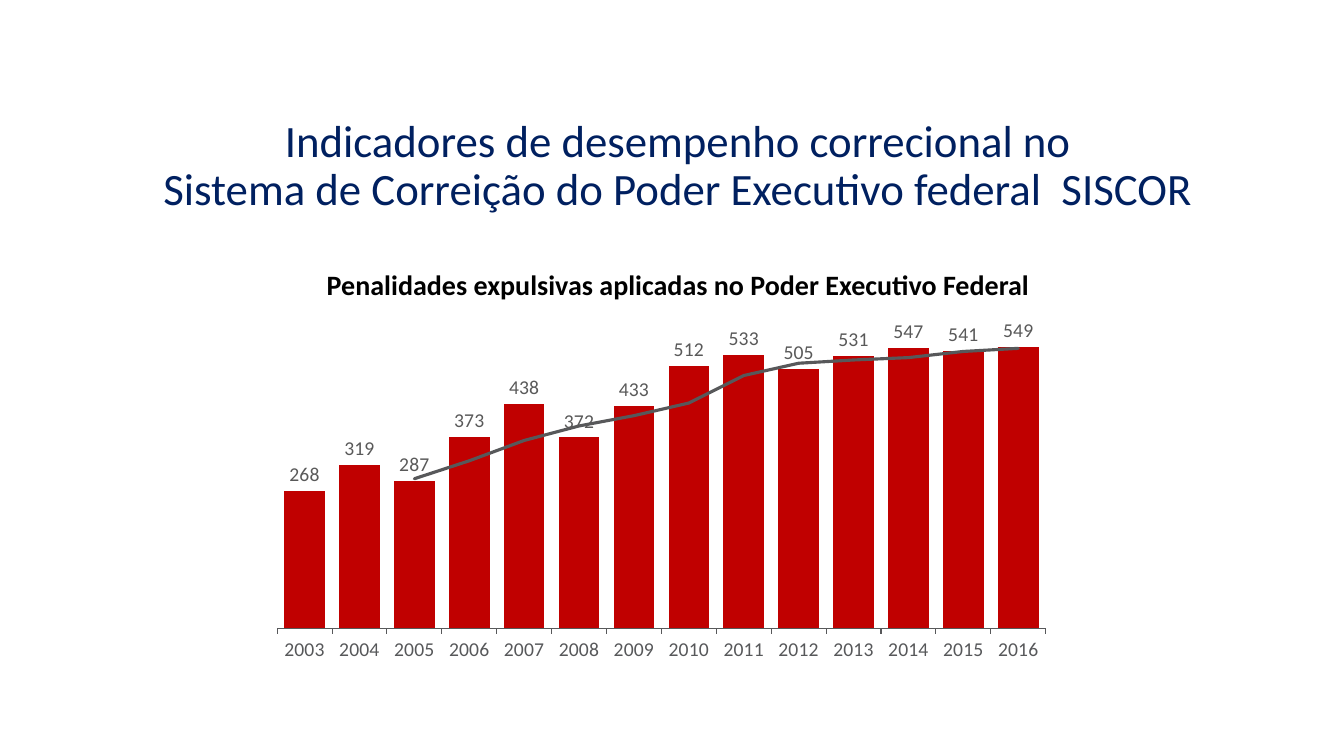
from pptx import Presentation
from pptx.chart.data import CategoryChartData
from pptx.dml.color import RGBColor
from pptx.enum import chart as ch, text
from pptx.oxml import parse_xml
from pptx.oxml.ns import nsdecls, qn
from pptx.util import Inches, Pt

FONT = "Calibri"
NAVY = RGBColor(0x00, 0x20, 0x60)
BLACK = RGBColor(0x00, 0x00, 0x00)
RED = RGBColor(0xC0, 0x00, 0x00)
SLATE = RGBColor(0x57, 0x58, 0x5A)
LABEL_GREY = RGBColor(0x59, 0x59, 0x59)

HEADINGS = [
    # wording, size, colour, bold, space before
    ("Indicadores de desempenho correcional no", 32, NAVY, False, 0),
    ("Sistema de Correição do Poder Executivo federal  SISCOR", 32, NAVY, False, 0),
    ("Penalidades expulsivas aplicadas no Poder Executivo Federal", 20, BLACK, True, 40),
]
FIRST_YEAR = 2003
PENALTIES = [268, 319, 287, 373, 438, 372, 433, 512, 533, 505, 531, 547, 541, 549]


def style_font(font, size, color, bold=False):
    font.name = FONT
    font.size = Pt(size)
    font.bold = bold
    font.color.rgb = color


def add_headings(slide, left, top, width, height):
    frame = slide.shapes.add_textbox(left, top, width, height).text_frame
    frame.word_wrap = True
    frame.vertical_anchor = text.MSO_ANCHOR.MIDDLE
    for index, (wording, size, color, bold, gap) in enumerate(HEADINGS):
        line = frame.add_paragraph() if index else frame.paragraphs[0]
        line.alignment = text.PP_ALIGN.CENTER
        line.line_spacing = 0.9
        line.space_before = Pt(gap)
        run = line.add_run()
        run.text = wording
        style_font(run.font, size, color, bold)


def add_moving_average(series, period, color, width):
    """Add a moving-average trend line, which must stand before the categories."""
    trend = parse_xml(
        f'<c:trendline {nsdecls("c", "a")}>'
        f'<c:spPr><a:ln w="{width}" cap="rnd"><a:solidFill><a:srgbClr val="{color}"/>'
        '</a:solidFill><a:prstDash val="solid"/></a:ln></c:spPr>'
        f'<c:trendlineType val="movingAvg"/><c:period val="{period}"/>'
        '<c:dispRSqr val="0"/><c:dispEq val="0"/></c:trendline>'
    )
    series._element.find(qn("c:cat")).addprevious(trend)


def add_penalties_chart(slide, left, top, width, height):
    data = CategoryChartData()
    data.categories = [str(FIRST_YEAR + i) for i in range(len(PENALTIES))]
    data.add_series("Series 1", PENALTIES)
    chart = slide.shapes.add_chart(
        ch.XL_CHART_TYPE.COLUMN_CLUSTERED, left, top, width, height, data
    ).chart
    chart.has_legend = False
    chart.has_title = False
    style_font(chart.font, 10, BLACK)

    years = chart.category_axis
    years.major_tick_mark = ch.XL_TICK_MARK.OUTSIDE
    years.format.line.color.rgb = SLATE
    years.format.line.width = Pt(0.75)
    style_font(years.tick_labels.font, 14, SLATE)

    scale = chart.value_axis
    scale.minimum_scale = 0
    scale.maximum_scale = 600
    scale.has_major_gridlines = False
    scale.visible = False

    plot = chart.plots[0]
    plot.gap_width = 35
    plot.vary_by_categories = False
    penalties = plot.series[0]
    penalties.format.fill.solid()
    penalties.format.fill.fore_color.rgb = RED
    labels = penalties.data_labels
    labels.show_value = True
    labels.position = ch.XL_LABEL_POSITION.OUTSIDE_END
    style_font(labels.font, 14, LABEL_GREY)
    add_moving_average(penalties, 3, SLATE, Pt(2.25))


def main():
    deck = Presentation()
    deck.slide_width = Inches(13.33)
    deck.slide_height = Inches(7.5)
    slide = deck.slides.add_slide(deck.slide_layouts[6])
    add_headings(slide, Inches(0.77), Inches(1.06), Inches(11.91), Inches(2.05))
    add_penalties_chart(slide, Inches(2.59), Inches(3.11), Inches(7.94), Inches(3.53))
    deck.save("out.pptx")


if __name__ == "__main__":
    main()
